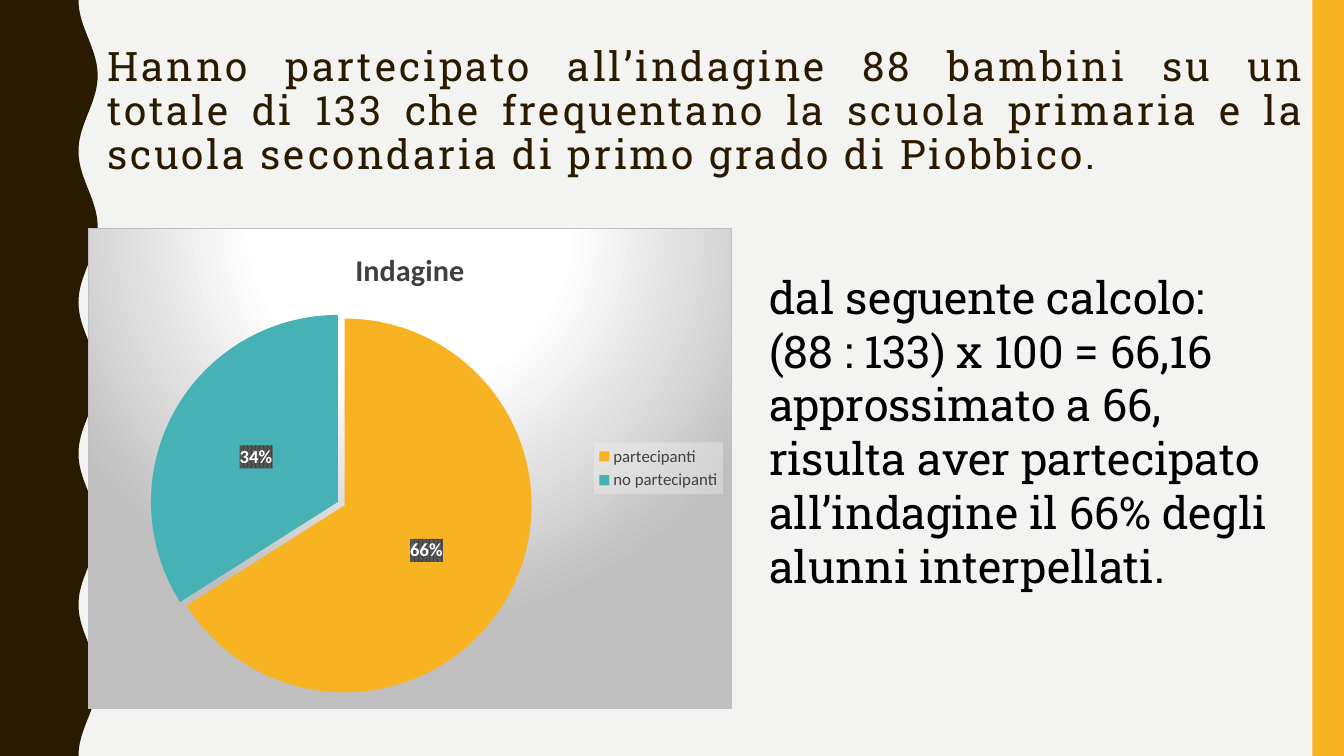
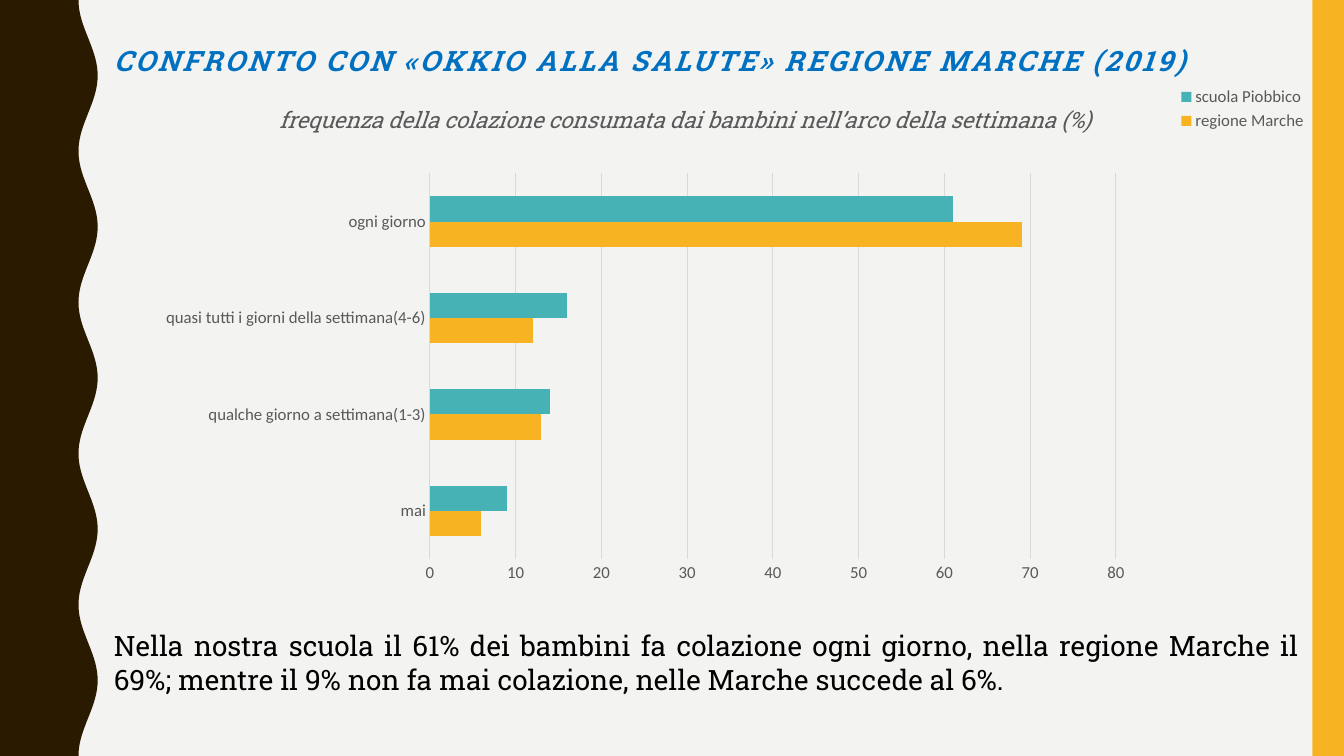
"""Builds two survey slides with a wavy left band, charts and text."""
import collections
import math

import lxml.etree
import pptx
import pptx.chart.data
import pptx.dml.color
import pptx.enum.chart
import pptx.enum.shapes
import pptx.enum.text
import pptx.oxml
import pptx.oxml.ns
import pptx.util

PX = 9525
Box = collections.namedtuple("Box", "left top width height")
PAGE = Box(0, 0, 1280, 720)
LEFT_BAND = Box(0, 0, 93, 720)
RIGHT_BAND = Box(1250, 0, 30, 720)

PAPER = pptx.dml.color.RGBColor(0xF3, 0xF3, 0xF2)
BROWN = pptx.dml.color.RGBColor(0x2A, 0x1A, 0x00)
AMBER = pptx.dml.color.RGBColor(0xF8, 0xB3, 0x23)
TEAL = pptx.dml.color.RGBColor(0x46, 0xB2, 0xB5)
BLUE = pptx.dml.color.RGBColor(0x00, 0x70, 0xC0)
BLACK = pptx.dml.color.RGBColor(0x00, 0x00, 0x00)
WHITE = pptx.dml.color.RGBColor(0xFF, 0xFF, 0xFF)
DARK_GREY = pptx.dml.color.RGBColor(0x40, 0x40, 0x40)
GREY = pptx.dml.color.RGBColor(0x59, 0x59, 0x59)
PALE_GREY = pptx.dml.color.RGBColor(0xD9, 0xD9, 0xD9)

SLAB = "Roboto Slab"
SANS = "Calibri"
JUSTIFY = pptx.enum.text.PP_ALIGN.JUSTIFY
LEFT = pptx.enum.text.PP_ALIGN.LEFT

NO_FILL = "<a:noFill/><a:ln><a:noFill/></a:ln>"
SPOTLIGHT_FILL = """<a:gradFill><a:gsLst>
<a:gs pos="0"><a:srgbClr val="FFFFFF"/></a:gs>
<a:gs pos="39000"><a:srgbClr val="FFFFFF"/></a:gs>
<a:gs pos="100000"><a:srgbClr val="BFBFBF"/></a:gs></a:gsLst>
<a:path path="circle"><a:fillToRect l="50000" t="-80000" r="50000" b="180000"/></a:path>
</a:gradFill><a:ln w="9525"><a:solidFill><a:srgbClr val="BFBFBF"/></a:solidFill></a:ln>"""
LABEL_FILL = """<a:pattFill prst="pct75"><a:fgClr><a:srgbClr val="404040"/></a:fgClr>
<a:bgClr><a:srgbClr val="595959"/></a:bgClr></a:pattFill><a:ln><a:noFill/></a:ln>"""
LEGEND_FILL = """<a:solidFill><a:srgbClr val="F2F2F2"><a:alpha val="39000"/></a:srgbClr>
</a:solidFill><a:ln><a:noFill/></a:ln>"""


def emu(box):
    """Return the box as four EMU lengths."""
    return [value * PX for value in box]


def set_font(font, size, color, name=SANS, bold=False, italic=False):
    """Give a font its size, colour, face and style."""
    font.size = pptx.util.Pt(size)
    font.color.rgb = color
    font.name = name
    font.bold = bold
    font.italic = italic


def paint(shape, color):
    """Fill a shape with a flat colour, with no line or shadow."""
    shape.shadow.inherit = False
    shape.fill.solid()
    shape.fill.fore_color.rgb = color
    shape.line.fill.background()


def add_wave_band(page, box):
    """Draw the left band, whose right edge is a wave of five periods."""
    amplitude, period, step = 9.12, 144, 4
    middle = box.left + box.width - amplitude
    edge = [
        (round((middle - amplitude * math.cos(2 * math.pi * y / period)) * PX), (box.top + y) * PX)
        for y in range(0, box.height + 1, step)
    ]
    builder = page.shapes.build_freeform(box.left * PX, box.top * PX, scale=1.0)
    builder.add_line_segments(edge + [(box.left * PX, (box.top + box.height) * PX)], close=True)
    paint(builder.convert_to_shape(), BROWN)


def add_page(deck):
    """Add a blank slide with the shared background and bands."""
    page = deck.slides.add_slide(deck.slide_layouts[6])
    page.background.fill.solid()
    page.background.fill.fore_color.rgb = PAPER
    add_wave_band(page, LEFT_BAND)
    band = page.shapes.add_shape(pptx.enum.shapes.MSO_SHAPE.RECTANGLE, *emu(RIGHT_BAND))
    paint(band, AMBER)
    return page


def add_text(page, box, lines, size, color=BLACK, align=LEFT, bold=False, italic=False):
    """Place wrapped slab text in the box and return its paragraphs."""
    frame = page.shapes.add_textbox(*emu(box)).text_frame
    frame.word_wrap = True
    frame.text = "\n".join(lines)
    for para in frame.paragraphs:
        para.alignment = align
        for span in para.runs:
            set_font(span.font, size, color, SLAB, bold, italic)
    return frame.paragraphs


def add_title(page, box, text, size, color, **style):
    """Place a letter-spaced title with tight lines."""
    for para in add_text(page, box, [text], size, color, **style):
        para.line_spacing = 0.9
        for span in para.runs:
            span.font._element.set("spc", "200")


def set_area(element, fill):
    """Insert shape properties just before the text properties of a chart part."""
    area = pptx.oxml.parse_xml(
        f"<c:spPr {pptx.oxml.ns.nsdecls('c', 'a')}>{fill}</c:spPr>"
    )
    element.find(pptx.oxml.ns.qn("c:txPr")).addprevious(area)


def add_chart(page, box, kind, categories, series, title, fill):
    """Add a chart with its data, title text and background."""
    data = pptx.chart.data.CategoryChartData()
    data.categories = categories
    for name, values in series:
        data.add_series(name, values)
    chart = page.shapes.add_chart(kind, *emu(box), data).chart
    set_font(chart.font, 10, BLACK)
    set_area(chart._chartSpace, fill)
    chart.has_title = True
    chart.chart_title.text_frame.text = title
    chart.chart_title.include_in_layout = False
    return chart


def add_legend(chart, position, color):
    """Show the legend at the given position."""
    chart.has_legend = True
    chart.legend.position = position
    chart.legend.include_in_layout = False
    set_font(chart.legend.font, 12, color)


def title_font(chart):
    """Return the font of the chart title."""
    return chart.chart_title.text_frame.paragraphs[0].runs[0].font


def add_share_pie(page, box):
    """Place the pie of participants."""
    chart = add_chart(
        page, box, pptx.enum.chart.XL_CHART_TYPE.PIE,
        ["partecipanti", "no partecipanti"], [("Series 1", (66, 34))],
        "Indagine", SPOTLIGHT_FILL,
    )
    set_font(title_font(chart), 21.6, DARK_GREY, bold=True)
    add_legend(chart, pptx.enum.chart.XL_LEGEND_POSITION.RIGHT, DARK_GREY)
    set_area(chart.legend._element, LEGEND_FILL)
    plot = chart.plots[0]
    for index, color in enumerate((AMBER, TEAL)):
        slice_format = plot.series[0].points[index].format
        slice_format.fill.solid()
        slice_format.fill.fore_color.rgb = color
        slice_format.line.fill.background()
    for point in plot.series[0]._element.findall(pptx.oxml.ns.qn("c:dPt")):
        explosion = pptx.oxml.parse_xml(
            f'<c:explosion {pptx.oxml.ns.nsdecls("c")} val="2"/>'
        )
        point.find(pptx.oxml.ns.qn("c:spPr")).addprevious(explosion)
    plot.has_data_labels = True
    labels = plot.data_labels
    labels.show_percentage = True
    labels.show_value = False
    labels.number_format = "0%"
    labels.number_format_is_linked = False
    labels.position = pptx.enum.chart.XL_LABEL_POSITION.CENTER
    set_font(labels.font, 13.3, WHITE, bold=True)
    set_area(labels._element, LABEL_FILL)


def set_plot_layout(chart, x, y, width, height):
    """Fix the inner plot area as fractions of the chart."""
    area = chart._chartSpace.chart.plotArea
    for old in area.findall(pptx.oxml.ns.qn("c:layout")):
        area.remove(old)
    layout = pptx.oxml.parse_xml(
        f"<c:layout {pptx.oxml.ns.nsdecls('c')}><c:manualLayout>"
        '<c:layoutTarget val="inner"/><c:xMode val="edge"/><c:yMode val="edge"/>'
        f'<c:x val="{x}"/><c:y val="{y}"/><c:w val="{width}"/><c:h val="{height}"/>'
        "</c:manualLayout></c:layout>"
    )
    area.insert(0, layout)


def set_line(line, color):
    """Give a chart line its colour and hairline width."""
    line.color.rgb = color
    line.width = pptx.util.Pt(0.75)


def add_breakfast_bars(page, box):
    """Place the bars comparing the school with the region."""
    chart = add_chart(
        page, box, pptx.enum.chart.XL_CHART_TYPE.BAR_CLUSTERED,
        ["mai", "qualche giorno a settimana(1-3)",
         "quasi tutti i giorni della settimana(4-6)", "ogni giorno"],
        [("regione Marche", (6, 13, 12, 69)), ("scuola Piobbico", (9, 14, 16, 61))],
        "frequenza della colazione consumata dai bambini nell’arco della settimana (%)",
        NO_FILL,
    )
    set_font(title_font(chart), 16, GREY, SLAB, italic=True)
    add_legend(chart, pptx.enum.chart.XL_LEGEND_POSITION.CORNER, GREY)
    set_plot_layout(chart, 0.295, 0.167, 0.55, 0.712)
    plot = chart.plots[0]
    plot.gap_width = 182
    plot.vary_by_categories = False
    for series, color in zip(plot.series, (AMBER, TEAL)):
        series.format.fill.solid()
        series.format.fill.fore_color.rgb = color
    for axis in (chart.category_axis, chart.value_axis):
        axis.major_tick_mark = pptx.enum.chart.XL_TICK_MARK.NONE
        axis.minor_tick_mark = pptx.enum.chart.XL_TICK_MARK.NONE
        set_font(axis.tick_labels.font, 12, GREY)
    set_line(chart.category_axis.format.line, PALE_GREY)
    values = chart.value_axis
    values.minimum_scale, values.maximum_scale, values.major_unit = 0, 80, 10
    values.format.line.fill.background()
    values.has_major_gridlines = True
    set_line(values.major_gridlines.format.line, PALE_GREY)


def build_participation_page(deck):
    """Build the slide on how many children took part."""
    page = add_page(deck)
    add_title(
        page, Box(93, 40, 1161, 148),
        "Hanno partecipato all’indagine 88 bambini su un totale di 133 che frequentano "
        "la scuola primaria e la scuola secondaria di primo grado di Piobbico.",
        29, BROWN, align=JUSTIFY,
    )
    add_share_pie(page, Box(84, 217, 613, 458))
    add_text(
        page, Box(723, 252, 531, 320),
        ["dal seguente calcolo:",
         "(88 : 133) x 100 = 66,16 approssimato a 66, risulta aver partecipato "
         "all’indagine il 66% degli alunni interpellati."],
        32,
    )


def build_comparison_page(deck):
    """Build the slide comparing breakfast habits."""
    page = add_page(deck)
    add_title(
        page, Box(99, 40, 1148, 50),
        "CONFRONTO CON «OKKIO ALLA SALUTE» REGIONE MARCHE (2019)",
        20, BLUE, bold=True, italic=True,
    )
    add_breakfast_bars(page, Box(59, 79, 1188, 516))
    add_text(
        page, Box(99, 594, 1148, 74),
        ["Nella nostra scuola il 61% dei bambini fa colazione ogni giorno, nella regione "
         "Marche il 69%; mentre il 9% non fa mai colazione, nelle Marche succede al 6%."],
        20, align=JUSTIFY,
    )


def main():
    """Build and save the deck."""
    deck = pptx.Presentation()
    deck.slide_width, deck.slide_height = PAGE.width * PX, PAGE.height * PX
    build_participation_page(deck)
    build_comparison_page(deck)
    deck.save("out.pptx")


if __name__ == "__main__":
    main()
